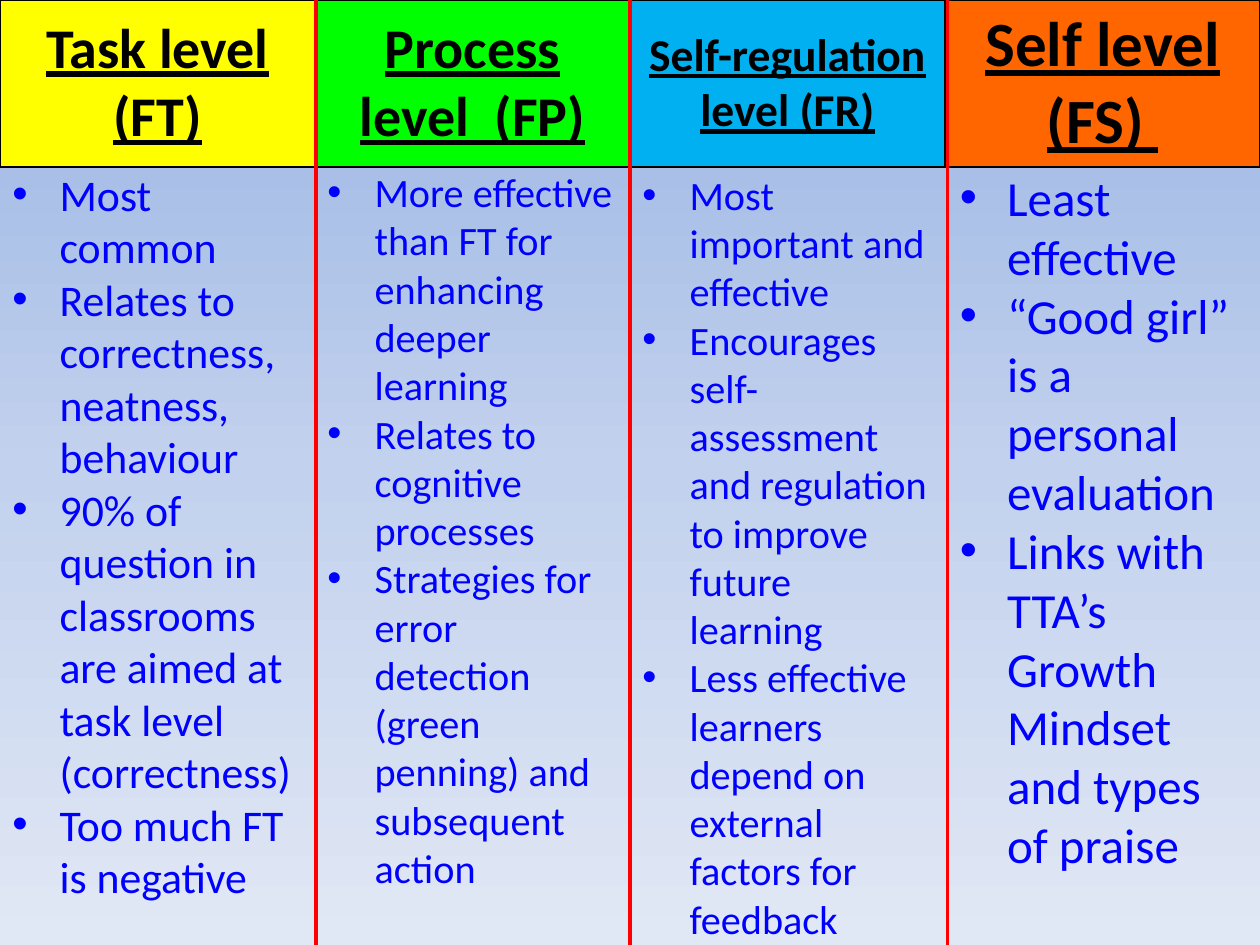
from copy import deepcopy

from lxml import etree
from pptx import Presentation
from pptx.dml.color import RGBColor
from pptx.enum.shapes import MSO_CONNECTOR
from pptx.enum.text import MSO_ANCHOR, PP_ALIGN
from pptx.oxml.ns import qn
from pptx.util import Pt

LINE = MSO_CONNECTOR.STRAIGHT
MIDDLE = MSO_ANCHOR.MIDDLE
CENTER = PP_ALIGN.CENTER

WIDTH, HEIGHT = 720, 540
COL_W = WIDTH / 4
FONT = "Calibri"
BLACK, BLUE, RED = "000000", "0000FF", "FF0000"
BACKGROUND = [(0, "9AB5E4"), (0.5, "C2D1ED"), (1, "E1E8F5")]
DIVIDERS = [180.72, 360, 541.44]

# Heading, size, fill
HEADINGS = [
    ("Task level (FT)", 32, "FFFF00"),
    ("Process level  (FP)", 32, "00FF00"),
    ("Self-regulation level (FR)", 26, "00B0F0"),
    ("Self level (FS) ", 36, "FF6600"),
]

# Left, top, height, size, bullet points
COLUMNS = [
    (0, 92.16, 431.28, 25, [
        "Most common",
        "Relates to correctness, neatness, behaviour",
        "90% of question in classrooms are aimed at task level (correctness)",
        "Too much FT is negative",
    ]),
    (180, 92.16, 425.52, 23, [
        "More effective than FT for enhancing deeper learning",
        "Relates to cognitive processes",
        "Strategies for error detection (green penning) and subsequent action",
    ]),
    (360, 93.6, 452.88, 23, [
        "Most important and effective",
        "Encourages self-assessment and regulation to improve future learning",
        "Less effective learners depend on external factors for feedback",
    ]),
    (541.44, 92.16, 414.72, 28, [
        "Least effective",
        "“Good girl” is a personal evaluation",
        "Links with TTA’s Growth Mindset and types of praise",
    ]),
]


def rgb(value):
    return RGBColor.from_string(value)


def add_run(p, text, color, **formats):
    r = p.add_run()
    r.text = text
    for name, value in formats.items():
        setattr(r.font, name, value)
    r.font.name = FONT
    r.font.color.rgb = rgb(color)


def set_background(s):
    fill = s.background.fill
    fill.gradient()
    fill.gradient_angle = 270
    stops = next(s.element.iter(qn("a:gsLst")))
    stops.append(deepcopy(stops[0]))
    for stop, (position, color) in zip(fill.gradient_stops, BACKGROUND):
        stop.position = position
        stop.color.rgb = rgb(color)


def set_borders(cell, color, width):
    tc_pr = cell._tc.get_or_add_tcPr()
    for i, side in enumerate("LRTB"):
        ln = etree.Element(qn(f"a:ln{side}"), w=str(Pt(width)))
        fill = etree.SubElement(ln, qn("a:solidFill"))
        etree.SubElement(fill, qn("a:srgbClr"), val=color)
        tc_pr.insert(i, ln)


def add_headings(s):
    frame = s.shapes.add_table(1, 4, 0, 0, Pt(WIDTH), Pt(93.6))
    table = frame.table
    table.rows[0].height = Pt(77)
    for cell, (text, size, color) in zip(table.iter_cells(), HEADINGS):
        cell.fill.solid()
        cell.fill.fore_color.rgb = rgb(color)
        cell.vertical_anchor = MIDDLE
        set_borders(cell, BLACK, 1)
        p = cell.text_frame.paragraphs[0]
        p.alignment = CENTER
        add_run(p, text, BLACK, size=Pt(size), bold=True, underline=True)


def add_divider(s, x):
    sp = s.shapes.add_connector(LINE, Pt(x), 0, Pt(x), Pt(HEIGHT))
    sp.line.color.rgb = rgb(RED)
    sp.line.width = Pt(2.25)
    etree.SubElement(sp._element.spPr, qn("a:effectLst"))


def set_bullet(p, color):
    p_pr = p._p.get_or_add_pPr()
    p_pr.set("marL", str(Pt(27)))
    p_pr.set("indent", str(-Pt(27)))
    bu_clr = etree.SubElement(p_pr, qn("a:buClr"))
    etree.SubElement(bu_clr, qn("a:srgbClr"), val=color)
    etree.SubElement(p_pr, qn("a:buFont"), typeface="Arial")
    etree.SubElement(p_pr, qn("a:buChar"), char="•")


def add_bullets(s, left, top, height, size, points):
    sp = s.shapes.add_textbox(Pt(left), Pt(top), Pt(COL_W), Pt(height))
    tf = sp.text_frame
    tf.word_wrap = True
    for i, text in enumerate(points):
        p = tf.add_paragraph() if i else tf.paragraphs[0]
        set_bullet(p, BLUE)
        add_run(p, text, BLUE, size=Pt(size))


def main():
    prs = Presentation()
    prs.slide_width, prs.slide_height = Pt(WIDTH), Pt(HEIGHT)
    s = prs.slides.add_slide(prs.slide_layouts[6])
    set_background(s)

    # Heading row, dividers, then the text of each column
    add_headings(s)
    for x in DIVIDERS:
        add_divider(s, x)
    for column in COLUMNS:
        add_bullets(s, *column)

    prs.save("out.pptx")


if __name__ == "__main__":
    main()
